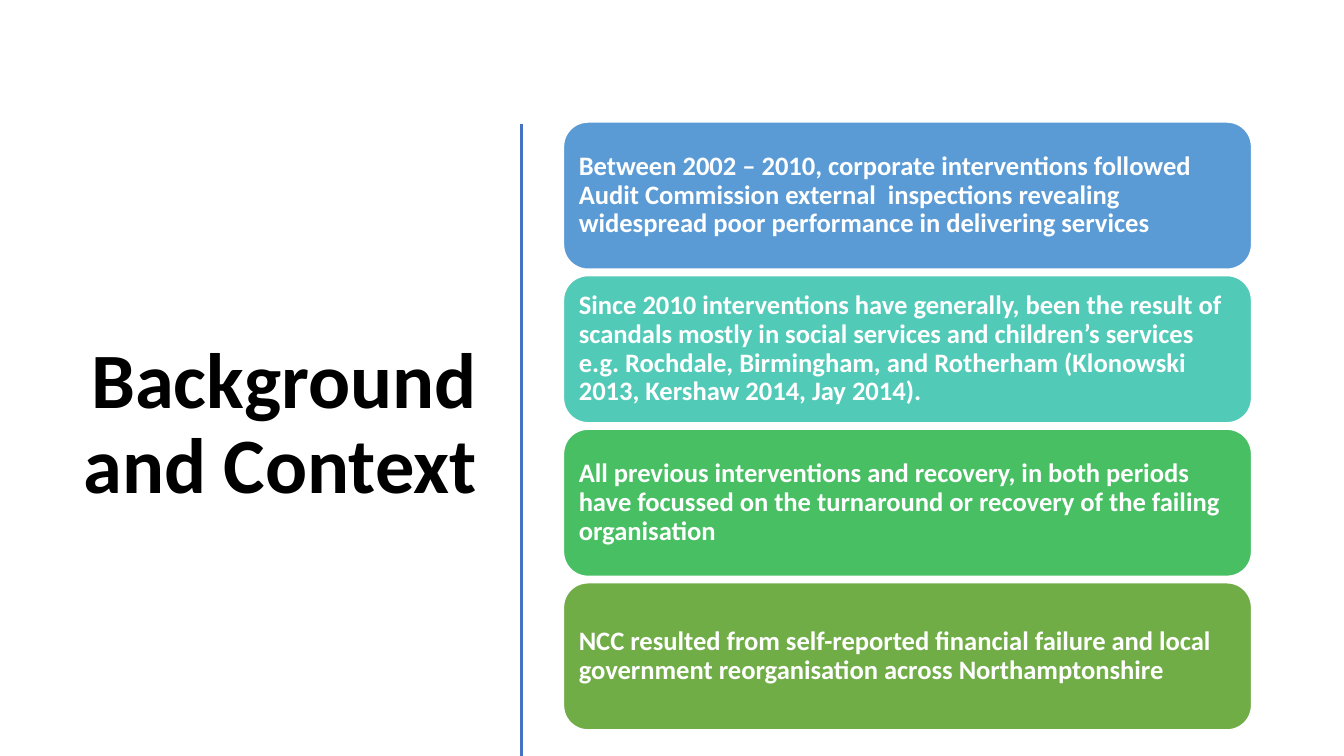
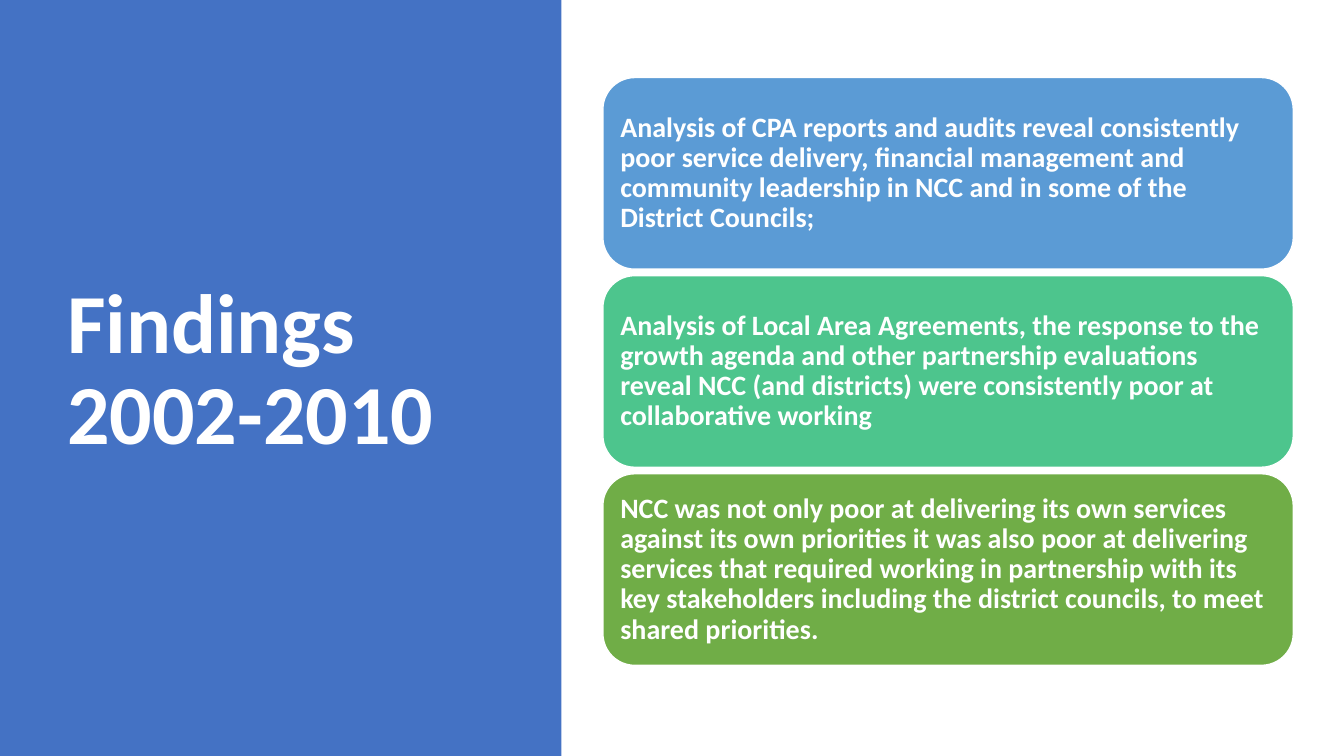
from lxml.etree import SubElement
from pptx import Presentation
from pptx.dml.color import RGBColor
from pptx.enum.shapes import MSO_CONNECTOR, MSO_SHAPE
from pptx.enum.text import MSO_ANCHOR, PP_ALIGN
from pptx.oxml.ns import qn
from pptx.util import Pt

FONT = "Calibri"
WHITE, BLACK, BLUE = "FFFFFF", "000000", "4472C4"
SKY, GREEN = "5B9BD5", "70AD47"
WIDTH, HEIGHT = 960, 540
GAP = 4.6
INSET = 5.8

CONTEXT = [
    (SKY, "Between 2002 – 2010, corporate interventions followed Audit Commission external  inspections "
          "revealing widespread poor performance in delivering services"),
    ("52CAB8", "Since 2010 interventions have generally, been the result of scandals mostly in social services "
               "and children’s services e.g. Rochdale, Birmingham, and Rotherham (Klonowski 2013, "
               "Kershaw 2014, Jay 2014)."),
    ("49BF64", "All previous interventions and recovery, in both periods have focussed on the turnaround "
               "or recovery of the failing organisation"),
    (GREEN, "NCC resulted from self-reported financial failure and local government reorganisation "
            "across Northamptonshire"),
]
FINDINGS = [
    (SKY, "Analysis of CPA reports and audits reveal consistently poor service delivery, financial management "
          "and community leadership in NCC and in some of the District Councils;"),
    ("4DC58D", "Analysis of Local Area Agreements, the response to the growth agenda and other partnership "
               "evaluations reveal NCC (and districts) were consistently poor at collaborative working"),
    (GREEN, "NCC was not only poor at delivering its own services against its own priorities it was also poor "
            "at delivering services that required working in partnership with its key stakeholders including "
            "the district councils, to meet shared priorities."),
]


def rgb(color):
    return RGBColor.from_string(color)


def write(shape, text, size, color, align=PP_ALIGN.LEFT):
    tf = shape.text_frame
    tf.word_wrap = True
    tf.vertical_anchor = MSO_ANCHOR.MIDDLE
    p = tf.paragraphs[0]
    p.text = text
    p.alignment = align
    p.line_spacing = 0.9
    p.font.name, p.font.size, p.font.bold = FONT, Pt(size), True
    p.font.color.rgb = rgb(color)
    return tf


def add_title(s, box, text, size, color, align=PP_ALIGN.LEFT):
    write(s.shapes.add_textbox(*map(Pt, box)), text, size, color, align)


def add_block(s, kind, box, fill):
    sp = s.shapes.add_shape(kind, *map(Pt, box))
    sp.shadow.inherit = False
    sp.fill.solid()
    sp.fill.fore_color.rgb = rgb(fill)
    sp.line.fill.background()
    return sp


def add_cards(s, cards, left, top, width, height, size):
    for i, (fill, text) in enumerate(cards):
        box = (left, top + i * (height + GAP), width, height)
        sp = add_block(s, MSO_SHAPE.ROUNDED_RECTANGLE, box, fill)
        sp.line.color.rgb = rgb(WHITE)
        sp.line.width = Pt(1)
        tf = write(sp, text, size, WHITE)
        tf.margin_left = tf.margin_right = tf.margin_top = tf.margin_bottom = Pt(INSET)


def add_divider(s, x, top, bottom):
    line = s.shapes.add_connector(MSO_CONNECTOR.STRAIGHT, *map(Pt, (x, top, x, bottom)))
    line.line.color.rgb = rgb(BLUE)
    line.line.width = Pt(2)
    SubElement(line._element.spPr, qn("a:effectLst"))


def build_context(s):
    add_title(s, (37.4, 84.2, 310.3, 440), "Background and Context", 56, BLACK, PP_ALIGN.RIGHT)
    add_divider(s, 372.4, 88.5, HEIGHT)
    add_cards(s, CONTEXT, 402.5, 87.2, 491.5, 105.1, 19)


def build_findings(s):
    add_block(s, MSO_SHAPE.RECTANGLE, (0, 0, 401, HEIGHT), BLUE)
    add_title(s, (41, 49, 299.5, 433.4), "Findings 2002-2010", 60, WHITE)
    add_cards(s, FINDINGS, 430.6, 55.4, 493.2, 136.9, 20)


def main():
    prs = Presentation()
    prs.slide_width, prs.slide_height = Pt(WIDTH), Pt(HEIGHT)
    for build in (build_context, build_findings):
        build(prs.slides.add_slide(prs.slide_layouts[6]))
    prs.save("out.pptx")


if __name__ == "__main__":
    main()
